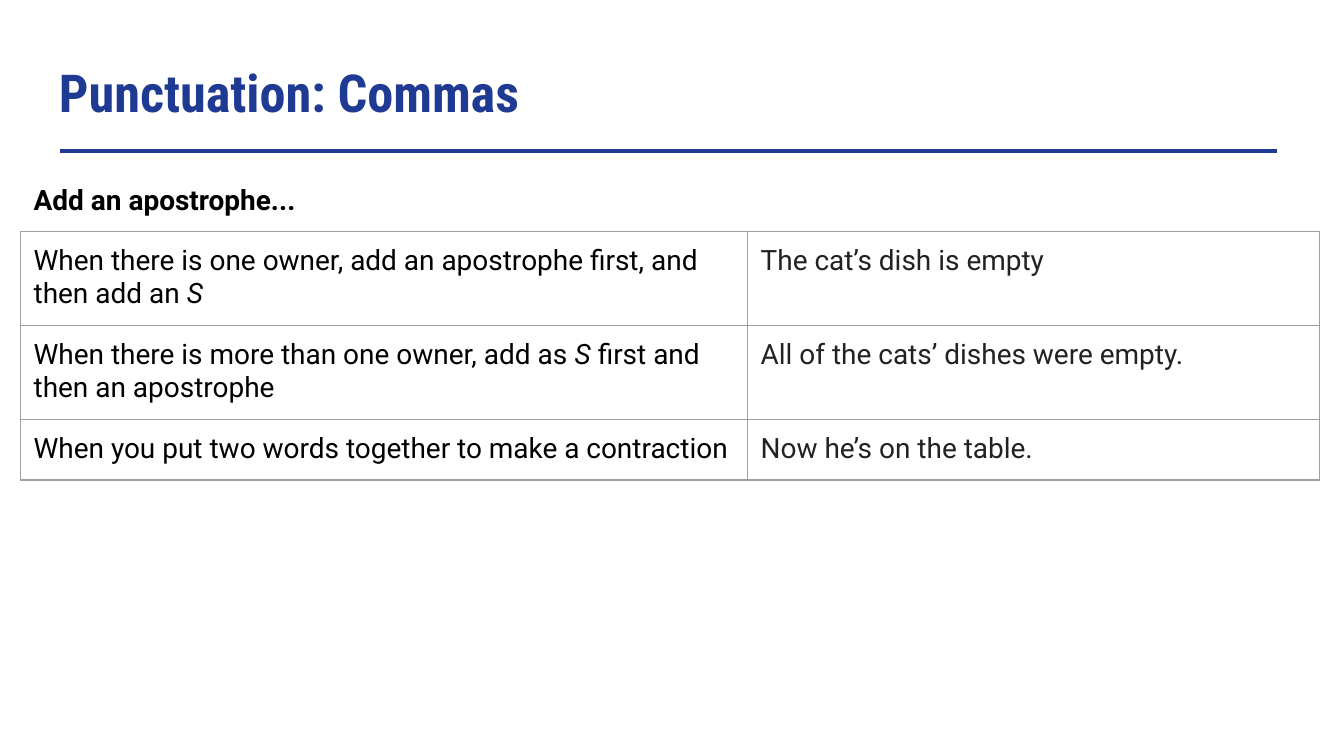
from dataclasses import dataclass

from lxml import etree
from pptx import Presentation, util as u
from pptx.dml.color import RGBColor
from pptx.enum import shapes, text
from pptx.oxml.ns import qn


@dataclass(frozen=True)
class Theme:
    blue: str = "1F3A93"
    black: str = "000000"
    dark: str = "222222"
    grey: str = "9E9E9E"
    head: str = "Roboto Condensed"
    body: str = "Roboto"
    big: float = 28
    small: float = 15
    rule: float = 2.25
    edge: float = 0.75
    pad: float = 0.1


@dataclass(frozen=True)
class Run:
    words: str
    italic: bool = False


@dataclass(frozen=True)
class Row:
    when: list[Run]
    case: str


T = Theme()
WIDE = 10
TALL = WIDE * 9 / 16
COLS = (5.41, 4.26)
HIGH = 0.43  # least height: rows grow to fit their text
ROWS = [
    Row([Run("When there is one owner, add an apostrophe first, and then add an "),
         Run("S", True)], "The cat’s dish is empty"),
    Row([Run("When there is more than one owner, add as "), Run("S ", True),
         Run("first and then an apostrophe")],
        "All of the cats’ dishes were empty."),
    Row([Run("When you put two words together to make a contraction")],
        "Now he’s on the table."),
]


def write(frame, runs: list[Run], hue: str, face: str, size: float,
          bold: bool = False) -> None:
    for item in runs:
        run = frame.paragraphs[0].add_run()
        run.text = item.words
        look = dict(name=face, size=u.Pt(size), bold=bold, italic=item.italic)
        for key, val in look.items():
            setattr(run.font, key, val)
        run.font.color.rgb = RGBColor.from_string(hue)


def pad(item) -> None:
    """Set equal insets on a cell or a text frame."""
    for side in ("left", "right", "top", "bottom"):
        setattr(item, f"margin_{side}", u.Inches(T.pad))


def edge(cell, shown: str) -> None:
    """Draw the sides named in shown (of L, R, T, B) and hide the others."""
    props = cell._tc.get_or_add_tcPr()
    for side in "LRTB":
        line = etree.SubElement(props, qn(f"a:ln{side}"), w=str(u.Pt(T.edge)))
        if side in shown:
            fill = etree.SubElement(line, qn("a:solidFill"))
            etree.SubElement(fill, qn("a:srgbClr"), val=T.grey)
        else:
            etree.SubElement(line, qn("a:noFill"))


def style(cell, shown: str) -> None:
    pad(cell)
    edge(cell, shown)
    cell.fill.background()


def title(slide) -> None:
    box = slide.shapes.add_textbox(*map(u.Inches, (0.34, 0.35, 9.32, 0.63)))
    frame = box.text_frame
    frame.word_wrap = True
    frame.vertical_anchor = text.MSO_ANCHOR.TOP
    pad(frame)
    write(frame, [Run("Punctuation: Commas")], T.blue, T.head, T.big, True)


def rule(slide) -> None:
    line = slide.shapes.add_connector(
        shapes.MSO_CONNECTOR.STRAIGHT,
        *map(u.Inches, (0.045 * WIDE, 0.2 * TALL, 0.95 * WIDE, 0.2 * TALL)))
    line.line.color.rgb = RGBColor.from_string(T.blue)
    line.line.width = u.Pt(T.rule)
    etree.SubElement(line._element.spPr, qn("a:effectLst"))


def grid(slide) -> None:
    count = len(ROWS) + 1
    area = map(u.Inches, (0.15, 1.27, sum(COLS), count * HIGH))
    table = slide.shapes.add_table(count, len(COLS), *area).table
    table.first_row = table.horz_banding = False
    for col, wide in zip(table.columns, COLS):
        col.width = u.Inches(wide)

    top = table.cell(0, 0)
    top.merge(table.cell(0, 1))
    for col in range(len(COLS)):
        style(table.cell(0, col), "B")
    write(top.text_frame, [Run("Add an apostrophe...")],
          T.black, T.body, T.small, True)
    for num, row in enumerate(ROWS, 1):
        pairs = ((row.when, T.black), ([Run(row.case)], T.dark))
        for col, (runs, hue) in enumerate(pairs):
            cell = table.cell(num, col)
            style(cell, "LRTB")
            write(cell.text_frame, runs, hue, T.body, T.small)


def main() -> None:
    deck = Presentation()
    deck.slide_width, deck.slide_height = u.Inches(WIDE), u.Inches(TALL)
    slide = deck.slides.add_slide(deck.slide_layouts[6])
    for draw in (title, rule, grid):
        draw(slide)
    deck.save("out.pptx")


if __name__ == "__main__":
    main()
